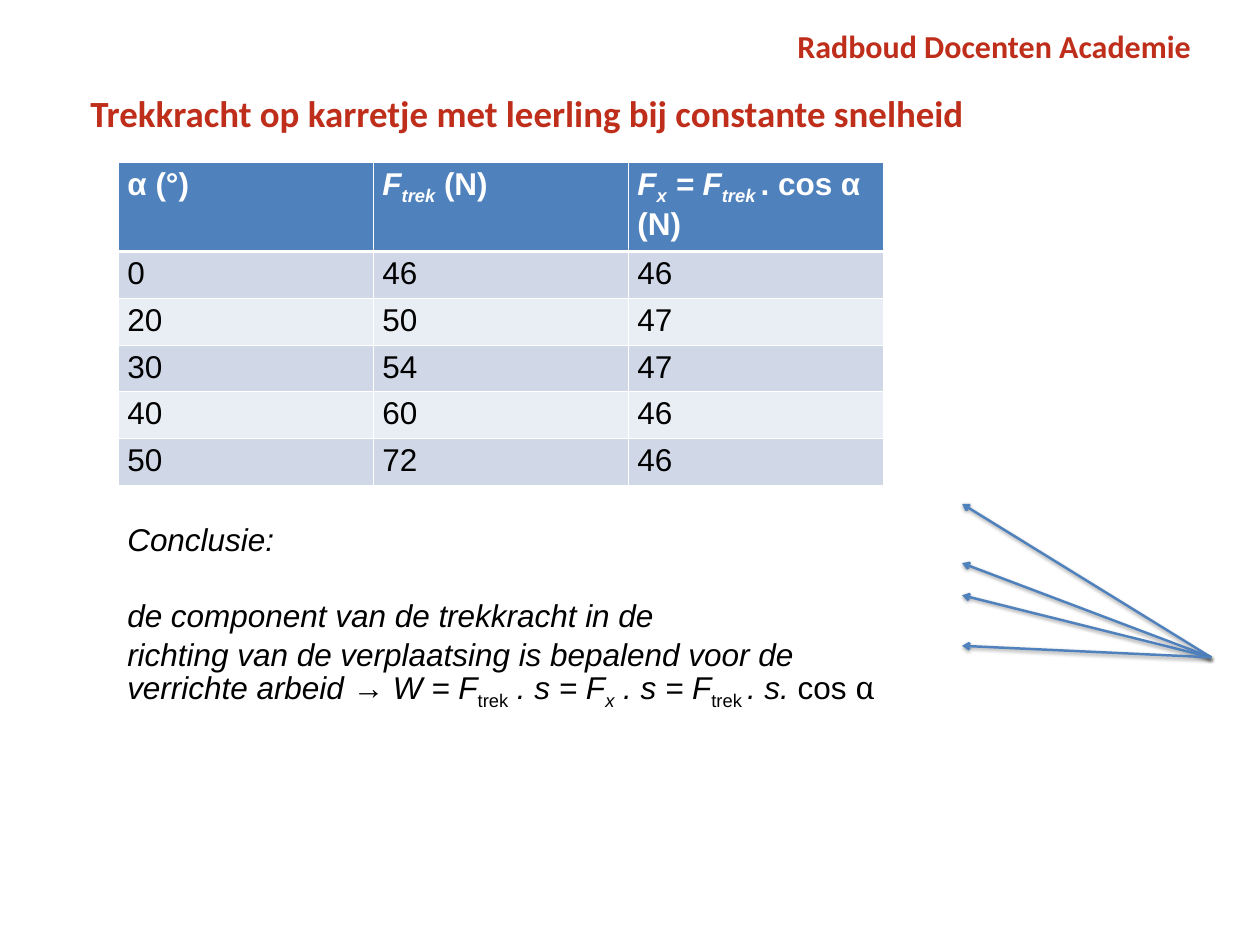
from lxml import etree
from pptx import Presentation
from pptx.dml.color import RGBColor
from pptx.enum.shapes import MSO_CONNECTOR
from pptx.enum.text import MSO_ANCHOR, PP_ALIGN
from pptx.oxml import parse_xml
from pptx.oxml.ns import nsdecls, qn
from pptx.util import Cm, Pt

STRAIGHT = MSO_CONNECTOR.STRAIGHT
TOP, LEFT = MSO_ANCHOR.TOP, PP_ALIGN.LEFT

RED = RGBColor(0xBE, 0x2E, 0x1A)
BLUE = RGBColor(0x4F, 0x81, 0xBD)
BAND_DARK = RGBColor(0xD0, 0xD8, 0xE8)
BAND_LIGHT = RGBColor(0xE9, 0xED, 0xF4)
WHITE = RGBColor(0xFF, 0xFF, 0xFF)
BLACK = RGBColor(0, 0, 0)

# Content: rich text is a list of (text, marks), i = italic, s = subscript, c = Cambria
ACADEMY = "Radboud Docenten Academie"
TITLE = "Trekkracht op karretje met leerling bij constante snelheid"
HEADINGS = [
    [("α (°)", "")],
    [("F", "i"), ("trek", "is"), (" (N)", "")],
    [("F", "i"), ("x", "is"), (" = F", "i"), ("trek ", "is"), (". cos α (N)", "")],
]
MEASUREMENTS = [(0, 46, 46), (20, 50, 47), (30, 54, 47), (40, 60, 46), (50, 72, 46)]
CONCLUSION = [
    [("Conclusie:", "i")],
    [("de component van de trekkracht in de", "i")],
    [("richting van de verplaatsing is bepalend voor de", "i")],
    [("verrichte arbeid ", "i"), ("→ ", ""), ("W = F", "i"), ("trek", "s"),
     (" . s = F", "i"), ("x", "is"), (" . s = F", "i"), ("trek ", "s"),
     (". s. ", "i"), ("cos ", ""), ("α", "c")],
]

# Layout in cm, text in points
BODY_SIZE = 25.6
LINE_PITCH = 31.2
CONTENT_LEFT = 3.4
COLUMN_WIDTH, HEADING_HEIGHT, ROW_HEIGHT = 7.31, 2.44, 1.28
PULL_POINT = (34.72, 18.85)
FORCE_TIP_X = 27.58
FORCE_TIP_YS = [14.45, 16.15, 17.07, 18.52]


def style(font, name, size, color, bold=False):
    font.name, font.size, font.bold = name, Pt(size), bold
    font.color.rgb = color


def write_rich(paragraph, pieces, color, bold=False):
    for text, marks in pieces:
        run = paragraph.add_run()
        run.text = text
        style(run.font, "Cambria" if "c" in marks else "Arial", BODY_SIZE, color, bold)
        run.font.italic = "i" in marks
        if "s" in marks:
            run.font._element.set("baseline", "-25000")


def add_borders(cell, top, bottom):
    properties = cell._tc.get_or_add_tcPr()
    for side, points in (("L", 1), ("R", 1), ("T", top), ("B", bottom)):
        properties.append(parse_xml(
            f'<a:ln{side} {nsdecls("a")} w="{Pt(points)}"><a:solidFill>'
            f'<a:srgbClr val="{WHITE}"/></a:solidFill></a:ln{side}>'))


def add_force(slide, tip_y):
    force = slide.shapes.add_connector(
        STRAIGHT, *map(Cm, PULL_POINT), Cm(FORCE_TIP_X), Cm(tip_y))
    force.line.color.rgb = BLUE
    force.line.width = Pt(2)
    etree.SubElement(force.line._get_or_add_ln(), qn("a:tailEnd"), type="arrow")
    force._element.spPr.append(parse_xml(
        f'<a:effectLst {nsdecls("a")}><a:outerShdw blurRad="{Pt(3.1)}" '
        f'dist="{Pt(1.6)}" dir="5400000" rotWithShape="0"><a:srgbClr val="{BLACK}">'
        '<a:alpha val="38000"/></a:srgbClr></a:outerShdw></a:effectLst>'))


def main():
    prs = Presentation()
    prs.slide_width, prs.slide_height = Cm(36.12), Cm(27.1)
    slide = prs.slides.add_slide(prs.slide_layouts[5])

    # Academy name
    academy = slide.shapes.add_textbox(Cm(22.61), Cm(0.64), Cm(12.7), Cm(1.37)).text_frame
    academy.word_wrap = True
    academy.text = ACADEMY
    style(academy.paragraphs[0].runs[0].font, "Calibri", 26, RED, True)

    # Title
    title = slide.shapes.title
    title.left, title.top, title.width, title.height = map(Cm, (2.49, 2.49, 30.99, 3))
    frame = title.text_frame
    frame.margin_left = frame.margin_right = frame.margin_top = frame.margin_bottom = Cm(0.1)
    frame.vertical_anchor = TOP
    frame.text = TITLE
    frame.paragraphs[0].alignment = LEFT
    style(frame.paragraphs[0].runs[0].font, "Calibri", 30, RED, True)

    # Measurement table
    rows = [HEADINGS] + [[[(str(value), "")] for value in row] for row in MEASUREMENTS]
    table = slide.shapes.add_table(
        len(rows), len(HEADINGS), Cm(CONTENT_LEFT), Cm(4.65),
        Cm(COLUMN_WIDTH * len(HEADINGS)),
        Cm(HEADING_HEIGHT + ROW_HEIGHT * len(MEASUREMENTS))).table
    for column in table.columns:
        column.width = Cm(COLUMN_WIDTH)
    for r, row in enumerate(rows):
        heading = r == 0
        table.rows[r].height = Cm(HEADING_HEIGHT if heading else ROW_HEIGHT)
        fill = BLUE if heading else BAND_DARK if r % 2 else BAND_LIGHT
        for c, pieces in enumerate(row):
            cell = table.cell(r, c)
            add_borders(cell, 3 if r == 1 else 1, 3 if heading else 1)
            cell.fill.solid()
            cell.fill.fore_color.rgb = fill
            write_rich(cell.text_frame.paragraphs[0], pieces,
                       WHITE if heading else BLACK, heading)

    # Conclusion
    conclusion = slide.shapes.add_textbox(
        Cm(CONTENT_LEFT), Cm(14.76), Cm(29.74), Cm(6.96)).text_frame
    conclusion.word_wrap = True
    for i, pieces in enumerate(CONCLUSION):
        paragraph = conclusion.add_paragraph() if i else conclusion.paragraphs[0]
        paragraph.line_spacing = Pt(LINE_PITCH)
        if i == 1:
            paragraph.space_before = Pt(LINE_PITCH)
        write_rich(paragraph, pieces, BLACK)

    # Pulling forces from one point
    for tip_y in FORCE_TIP_YS:
        add_force(slide, tip_y)

    prs.save("out.pptx")


if __name__ == "__main__":
    main()
